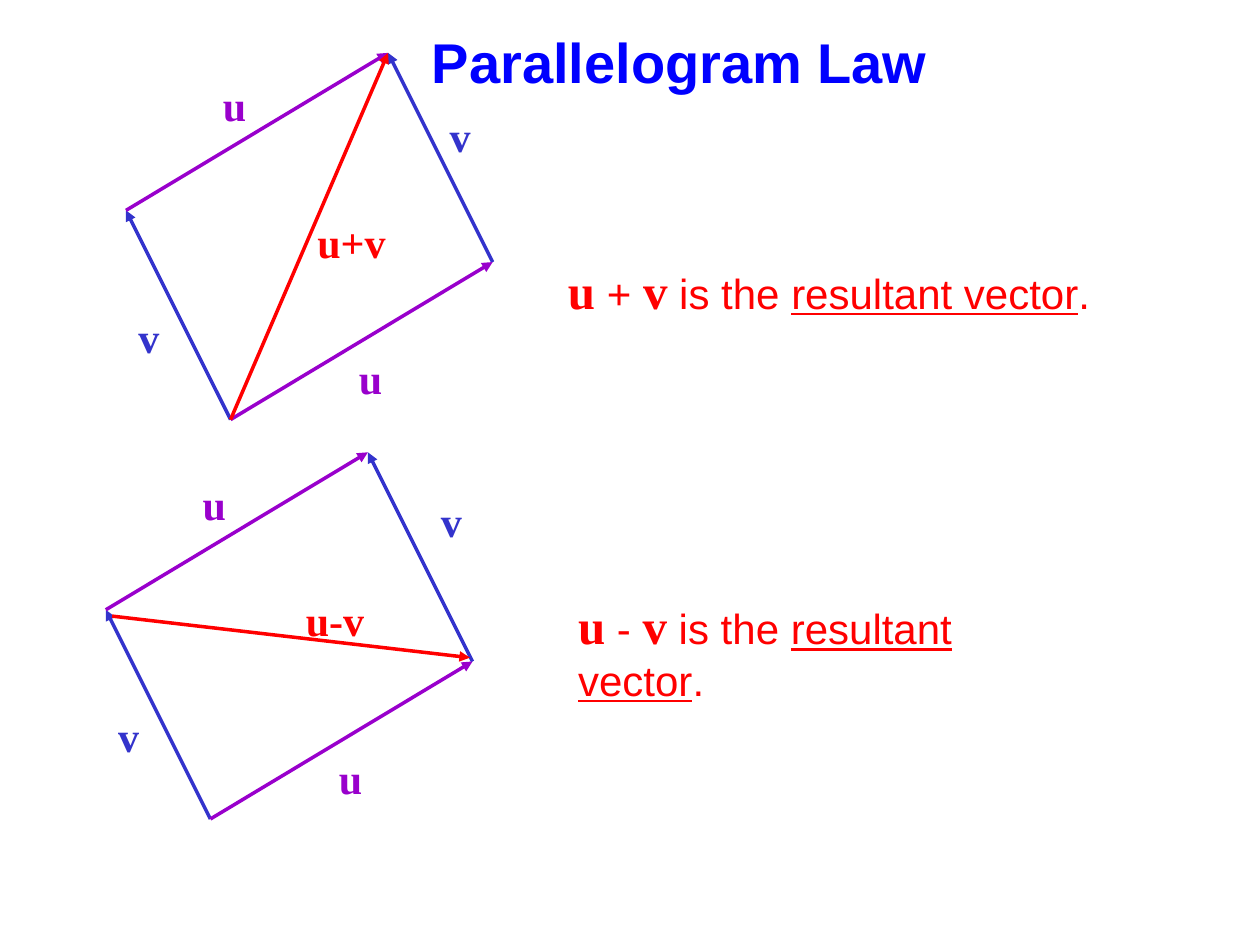
from dataclasses import dataclass
from typing import NamedTuple

from lxml.etree import SubElement
from pptx import Presentation
from pptx.dml.color import RGBColor
from pptx.enum.shapes import MSO_CONNECTOR
from pptx.enum.text import MSO_AUTO_SIZE as AutoSize
from pptx.oxml.ns import qn
from pptx.util import Inches, Pt


@dataclass(frozen=True)
class Theme:
    u: RGBColor = RGBColor(0x99, 0x00, 0xCC)
    v: RGBColor = RGBColor(0x33, 0x33, 0xCC)
    resultant: RGBColor = RGBColor(0xFF, 0x00, 0x00)
    title: RGBColor = RGBColor(0x00, 0x00, 0xFF)
    vector_font: str = "Times New Roman"
    text_font: str = "Arial"
    title_size: int = 32
    vector_size: int = 28
    text_size: int = 24
    line_width: int = 2


class Point(NamedTuple):
    x: float
    y: float

    def plus(self, other: "Point") -> "Point":
        return Point(self.x + other.x, self.y + other.y)


class Run(NamedTuple):
    text: str
    is_vector: bool = False
    underline: bool = False


@dataclass(frozen=True)
class Diagram:
    """A parallelogram on u and v; label places are relative to its origin."""
    origin: Point
    diagonal: tuple[Point, Point]
    right_v_label: Point
    diagonal_label: Point
    diagonal_label_width: float
    sign: str
    statement_at: Point
    statement_width: float
    statement_wraps: bool


THEME = Theme()
U = Point(2.08, -1.25)
V = Point(-0.83, -1.66)

DIAGRAMS = [
    Diagram(Point(1.83, 3.33), (Point(0, 0), U.plus(V)),
            Point(1.64, -2.5), Point(0.59, -1.66), 0.74,
            "+", Point(4.41, 2.02), 4.34, False),
    Diagram(Point(1.67, 6.5), (Point(-0.78, -1.61), Point(2.06, -1.28)),
            Point(1.73, -2.62), Point(0.66, -1.83), 0.67,
            "-", Point(4.49, 4.68), 4.2, True),
]


def add_vector(slide, start: Point, end: Point, color: RGBColor) -> None:
    arrow = slide.shapes.add_connector(
        MSO_CONNECTOR.STRAIGHT,
        Inches(start.x), Inches(start.y), Inches(end.x), Inches(end.y))
    arrow.line.color.rgb = color
    arrow.line.width = Pt(THEME.line_width)
    SubElement(arrow.line._get_or_add_ln(), qn("a:tailEnd"), type="triangle")
    SubElement(arrow._element.spPr, qn("a:effectLst"))


def add_textbox(slide, at: Point, width: float, height: float, wrap: bool = False):
    """Add an empty text box and return its paragraph."""
    frame = slide.shapes.add_textbox(
        Inches(at.x), Inches(at.y), Inches(width), Inches(height)).text_frame
    frame.word_wrap = wrap
    frame.auto_size = AutoSize.SHAPE_TO_FIT_TEXT
    return frame.paragraphs[0]


def set_font(font, name: str, size: int, color: RGBColor, bold: bool) -> None:
    font.name = name
    font.size = Pt(size)
    font.color.rgb = color
    font.bold = bold


def add_label(slide, text: str, at: Point, width: float, color: RGBColor) -> None:
    label = add_textbox(slide, at, width, 0.5)
    label.text = text
    set_font(label.font, THEME.vector_font, THEME.text_size, color, True)


def add_statement(slide, diagram: Diagram) -> None:
    statement = add_textbox(slide, diagram.statement_at, diagram.statement_width,
                            0.57, diagram.statement_wraps)
    runs = [Run("u", is_vector=True), Run(f" {diagram.sign} "),
            Run("v", is_vector=True), Run(" is the "),
            Run("resultant vector", underline=True), Run(".")]
    for part in runs:
        run = statement.add_run()
        run.text = part.text
        name, size = ((THEME.vector_font, THEME.vector_size) if part.is_vector
                      else (THEME.text_font, THEME.text_size))
        set_font(run.font, name, size, THEME.resultant, part.is_vector)
        run.font.underline = part.underline


def add_diagram(slide, diagram: Diagram) -> None:
    origin = diagram.origin
    u_end, v_end = origin.plus(U), origin.plus(V)
    far_corner = u_end.plus(V)

    # Sides and diagonal
    add_vector(slide, origin, v_end, THEME.v)
    add_vector(slide, u_end, far_corner, THEME.v)
    add_vector(slide, origin, u_end, THEME.u)
    add_vector(slide, v_end, far_corner, THEME.u)
    start, end = diagram.diagonal
    add_vector(slide, origin.plus(start), origin.plus(end), THEME.resultant)

    # Labels
    for place in (diagram.right_v_label, Point(-0.83, -0.91)):
        add_label(slide, "v", origin.plus(place), 0.37, THEME.v)
    for place in (Point(0.92, -0.58), Point(-0.16, -2.75)):
        add_label(slide, "u", origin.plus(place), 0.39, THEME.u)
    add_label(slide, f"u{diagram.sign}v", origin.plus(diagram.diagonal_label),
              diagram.diagonal_label_width, THEME.resultant)

    add_statement(slide, diagram)


def main() -> None:
    deck = Presentation()
    deck.slide_width, deck.slide_height = Inches(10), Inches(7.5)
    slide = deck.slides.add_slide(deck.slide_layouts[6])

    for diagram in DIAGRAMS:
        add_diagram(slide, diagram)

    # Title
    title = add_textbox(slide, Point(3.33, 0.17), 4.58, 0.64, wrap=True)
    title.text = "Parallelogram Law"
    set_font(title.font, THEME.text_font, THEME.title_size, THEME.title, True)

    deck.save("out.pptx")


if __name__ == "__main__":
    main()
